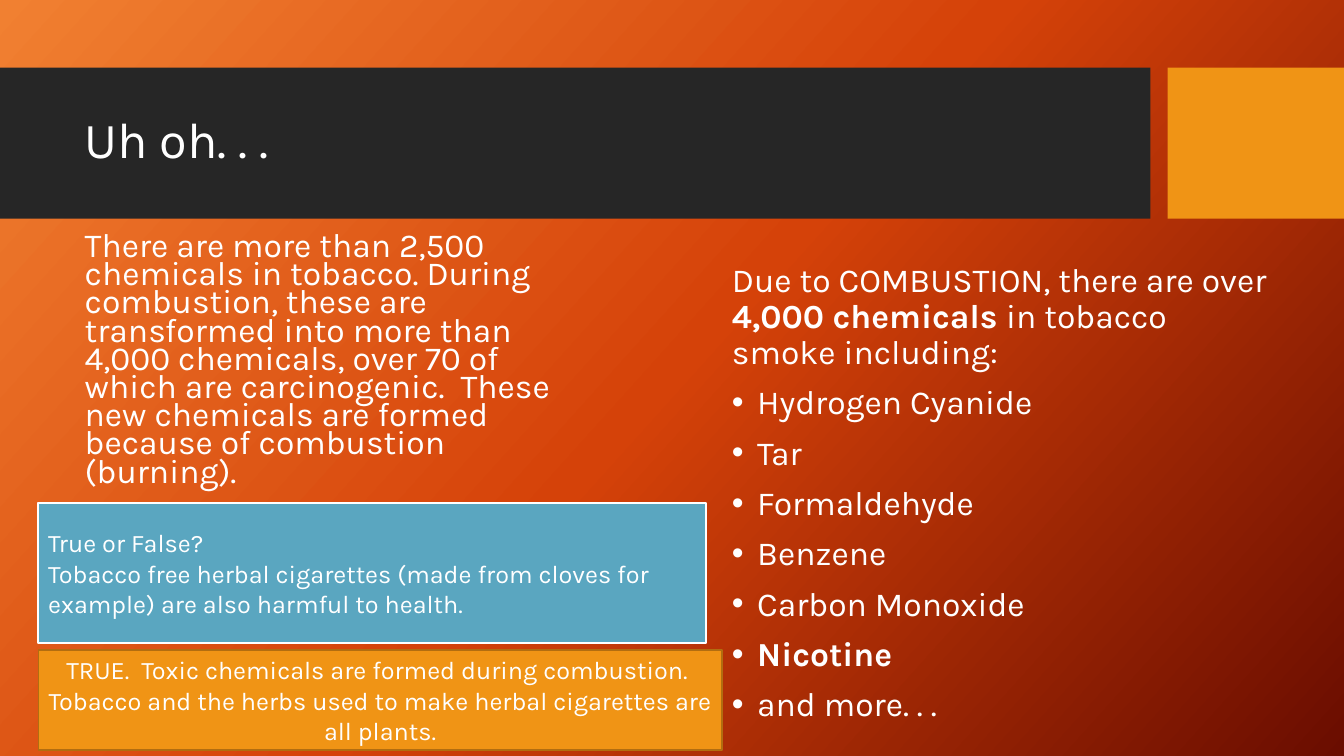
from copy import deepcopy

from pptx import Presentation
from pptx.dml.color import RGBColor
from pptx.enum import shapes, text
from pptx.oxml.ns import qn
from pptx.util import Inches, Pt

FONT = "Karla"
COLORS = {
    "white": "FFFFFF", "band": "262626", "accent": "F09415",
    "accent_line": "B26D10", "question": "5AA6C0",
}
GRADIENT = [(0, "F18031"), (0.5, "D54209"), (1, "6A0D00")]
GRADIENT_ANGLE = 318

TITLE = "Uh oh. . ."
EXPLANATION = (
    "There are more than 2,500 chemicals in tobacco. During combustion, these are "
    "transformed into more than 4,000 chemicals, over 70 of which are carcinogenic.  "
    "These new chemicals are formed because of combustion (burning)."
)
# Each paragraph is a list of (text, bold) runs.
INTRO = [("Due to COMBUSTION, there are over ", False), ("4,000 chemicals ", True),
         ("in tobacco smoke including:", False)]
CHEMICALS = [
    ("Hydrogen Cyanide", False), ("Tar", False), ("Formaldehyde", False),
    ("Benzene", False), ("Carbon Monoxide", False), ("Nicotine", True),
    ("and more. . .", False),
]
QUESTION = [
    "True or False?",
    "Tobacco free herbal cigarettes (made from cloves for example) are also harmful to health.",
]
ANSWER = [
    "TRUE.  Toxic chemicals are formed during combustion.  Tobacco and the herbs used "
    "to make herbal cigarettes are all plants.",
]
BANDS = [((0, 0.67, 11.41, 1.5), "band"), ((11.58, 0.67, 1.75, 1.5), "accent")]


def rgb(name):
    return RGBColor.from_string(COLORS[name])


def style_font(paragraph, size):
    font = paragraph.font
    font.name, font.size, font.color.rgb = FONT, Pt(size), rgb("white")


def place(shape, box):
    shape.left, shape.top, shape.width, shape.height = map(Inches, box)


def add_rectangle(slide, box, fill):
    shape = slide.shapes.add_shape(shapes.MSO_SHAPE.RECTANGLE, *map(Inches, box))
    shape.shadow.inherit = False
    shape.fill.solid()
    shape.fill.fore_color.rgb = rgb(fill)
    shape.line.fill.background()
    return shape


def set_bullet(paragraph, bulleted):
    properties = paragraph._p.get_or_add_pPr()
    indent = Inches(0.25) if bulleted else 0
    properties.set("marL", str(indent))
    properties.set("indent", str(-indent))
    if bulleted:
        properties.makeelement(qn("a:buChar"))
        bullet = properties.makeelement(qn("a:buChar"), {"char": "•"})
    else:
        bullet = properties.makeelement(qn("a:buNone"))
    properties.append(bullet)


def fill_body(placeholder, box, paragraphs, line_spacing):
    """Write (runs, bulleted) paragraphs into a body placeholder."""
    place(placeholder, box)
    frame = placeholder.text_frame
    frame.auto_size = text.MSO_AUTO_SIZE.NONE
    for index, (runs, bulleted) in enumerate(paragraphs):
        paragraph = frame.add_paragraph() if index else frame.paragraphs[0]
        set_bullet(paragraph, bulleted)
        paragraph.line_spacing = line_spacing
        paragraph.space_before = Pt(10 if index else 0)
        style_font(paragraph, 24)
        for words, bold in runs:
            run = paragraph.add_run()
            run.text, run.font.bold = words, bold


def add_callout(slide, box, lines, fill, line, line_width, alignment):
    shape = add_rectangle(slide, box, fill)
    shape.line.color.rgb = rgb(line)
    shape.line.width = Pt(line_width)
    frame = shape.text_frame
    frame.word_wrap = True
    frame.vertical_anchor = text.MSO_ANCHOR.MIDDLE
    frame.text = "\n".join(lines)
    for paragraph in frame.paragraphs:
        paragraph.alignment = alignment
        style_font(paragraph, 18)


def paint_background(slide):
    fill = slide.background.fill
    fill.gradient()
    fill.gradient_angle = GRADIENT_ANGLE
    stops = slide.element.find(".//" + qn("a:gsLst"))
    stops.insert(1, deepcopy(stops[0]))
    for stop, (position, color) in zip(fill.gradient_stops, GRADIENT):
        stop.position = position
        stop.color.rgb = RGBColor.from_string(color)


def main():
    presentation = Presentation()
    presentation.slide_width, presentation.slide_height = Inches(13.33), Inches(7.5)
    slide = presentation.slides.add_slide(presentation.slide_layouts[3])
    paint_background(slide)

    title, left_body, right_body = slide.placeholders
    for position, (box, fill) in enumerate(BANDS):
        band = add_rectangle(slide, box, fill)
        # Bands sit behind the placeholders, after the tree's two property elements.
        slide.shapes._spTree.insert(2 + position, band._element)

    place(title, (0.74, 0.82, 10.51, 1.18))
    frame = title.text_frame
    frame.text = TITLE
    frame.auto_size = text.MSO_AUTO_SIZE.NONE
    frame.vertical_anchor = text.MSO_ANCHOR.MIDDLE
    heading = frame.paragraphs[0]
    heading.alignment = text.PP_ALIGN.LEFT
    heading.line_spacing = 0.9
    style_font(heading, 36)

    fill_body(left_body, (0.74, 2.28, 5.14, 2.5), [([(EXPLANATION, False)], False)], 0.7)
    chemicals = [([chemical], True) for chemical in CHEMICALS]
    fill_body(right_body, (7.16, 2.56, 5.51, 4.88), [(INTRO, False)] + chemicals, 0.9)

    add_callout(slide, (0.38, 4.99, 6.62, 1.39), QUESTION, "question", "white", 1.5,
                text.PP_ALIGN.LEFT)
    add_callout(slide, (0.38, 6.45, 6.78, 0.99), ANSWER, "accent", "accent_line", 1,
                text.PP_ALIGN.CENTER)
    presentation.save("out.pptx")


if __name__ == "__main__":
    main()
